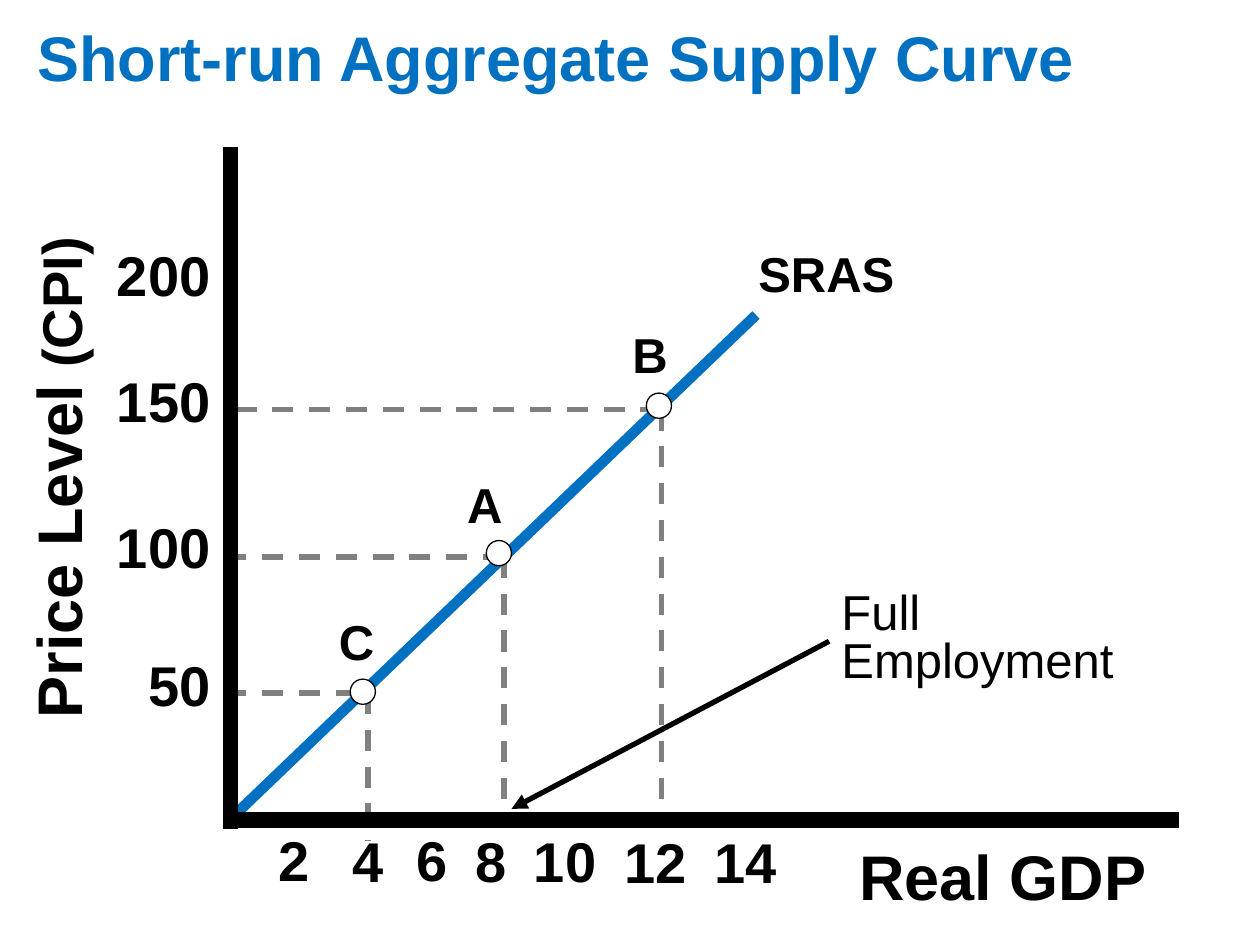
"""Build the short-run aggregate supply curve slide."""
from dataclasses import dataclass

from lxml import etree
from pptx import Presentation
from pptx.dml.color import RGBColor
from pptx.enum.dml import MSO_LINE
from pptx.enum.shapes import MSO_CONNECTOR, MSO_SHAPE
from pptx.enum.text import MSO_AUTO_SIZE, PP_ALIGN
from pptx.oxml.ns import qn
from pptx.util import Inches, Pt

LEFT, MID = PP_ALIGN.LEFT, PP_ALIGN.CENTER
FIT = MSO_AUTO_SIZE.SHAPE_TO_FIT_TEXT
DASH = MSO_LINE.DASH
LINE = MSO_CONNECTOR.STRAIGHT
OVAL = MSO_SHAPE.OVAL


@dataclass(frozen=True)
class Theme:
    font: str = "Arial"
    ink: RGBColor = RGBColor(0, 0, 0)
    blue: RGBColor = RGBColor(0x00, 0x70, 0xC0)
    gray: RGBColor = RGBColor(0x80, 0x80, 0x80)
    white: RGBColor = RGBColor(0xFF, 0xFF, 0xFF)
    title: int = 36
    tick: int = 32
    note: int = 28


theme = Theme()
prs = Presentation()
prs.slide_width, prs.slide_height = Inches(10), Inches(7.5)
slide = prs.slides.add_slide(prs.slide_layouts[6])
shapes = slide.shapes


def label(box, runs, align=LEFT, lead=0.9, color=theme.ink, bold=True, fill=False):
    shape = shapes.add_textbox(*map(Inches, box))
    if fill:
        shape.fill.solid()
        shape.fill.fore_color.rgb = theme.white
    frame = shape.text_frame
    for key, val in {"word_wrap": True, "auto_size": FIT}.items():
        setattr(frame, key, val)
    para = frame.paragraphs[0]
    for key, val in {"alignment": align, "line_spacing": lead}.items():
        setattr(para, key, val)
    gap = etree.Element(qn("a:spcBef"))
    etree.SubElement(gap, qn("a:spcPct"), val="50000")
    para._p.pPr.find(qn("a:lnSpc")).addnext(gap)
    for text, size in runs:
        run = para.add_run()
        run.text = text
        for key, val in {"name": theme.font, "size": Pt(size), "bold": bold}.items():
            setattr(run.font, key, val)
        run.font.color.rgb = color
    return shape


def stroke(start, end, color, width, dash=None, arrow=False):
    link = shapes.add_connector(LINE, *map(Inches, (*start, *end)))
    link.line.color.rgb = color
    for key, val in {"width": Pt(width), "dash_style": dash}.items():
        setattr(link.line, key, val)
    if arrow:
        etree.SubElement(link.line._ln, qn("a:tailEnd"), type="triangle")
    etree.SubElement(link._element.spPr, qn("a:effectLst"))


prices = [
    ("200", 0.83, 1.92, 1),
    ("150", 0.83, 2.92, 1.02),
    ("100", 0.83, 4.08, 0.95),
    ("50", 1.08, 5.17, 0.72),
]
for text, x, y, wide in prices:
    label((x, y, wide, 0.58), [(text, theme.tick)], fill=text == "100")

outputs = [
    ("2", 1.96, 6.56, 0.75),
    ("4", 2.59, 6.57, 0.67),
    ("6", 3.14, 6.56, 0.58),
    ("8", 3.61, 6.57, 0.58),
    ("10", 4.07, 6.57, 0.83),
    ("12", 4.79, 6.58, 0.83),
    ("14", 5.5, 6.58, 0.83),
]
for text, x, y, wide in outputs:
    label((x, y, wide, 0.58), [(text, theme.tick)], MID)

label((0.08, 0.17, 8.67, 0.64), [("Short-run Aggregate Supply Curve", theme.title)],
      MID, color=theme.blue, fill=True)
label((6.67, 6.67, 2.58, 0.64), [("Real GDP", theme.title)], MID, fill=True)
level = label((-1.72, 3.47, 4.42, 0.64),
              [("Price Level ", theme.title), ("(CPI)", theme.tick)], MID)
level.rotation = 270

for text, x, y, wide in [("B", 4.92, 2.58, 0.75), ("A", 3.61, 3.77, 0.67),
                         ("C", 2.59, 4.86, 0.75)]:
    label((x, y, wide, 0.53), [(text, theme.note)])
label((5.92, 1.97, 2, 0.48), [("SRAS", theme.note)], lead=0.8)
label((6.58, 4.66, 2.5, 0.85), [("Full Employment", theme.note)], lead=0.8, bold=False)

stroke((6.58, 5.09), (4.06, 6.42), theme.ink, 3, arrow=True)
stroke((1.83, 6.5), (6, 2.5), theme.blue, 6)

axis = 1.83
for edge, x, y, foot in [(5.25, 5.25, 3.25, 6.5), (4, 4, 4.42, 6.5),
                         (2.83, 2.92, 5.5, 6.67)]:
    stroke((edge, y), (axis, y), theme.gray, 3, DASH)
    stroke((x, y), (x, foot), theme.gray, 3, DASH)

for x, y in [(5.13, 3.12), (3.86, 4.29), (2.78, 5.39)]:
    dot = shapes.add_shape(OVAL, *map(Inches, (x, y, 0.2, 0.2)))
    dot.shadow.inherit = False
    dot.fill.solid()
    dot.fill.fore_color.rgb = theme.white
    dot.line.color.rgb = theme.ink
    dot.line.width = Pt(0.75)

stroke((axis, 1.17), (axis, 6.58), theme.ink, 9)
stroke((1.78, 6.51), (9.36, 6.51), theme.ink, 9)

prs.save("out.pptx")
